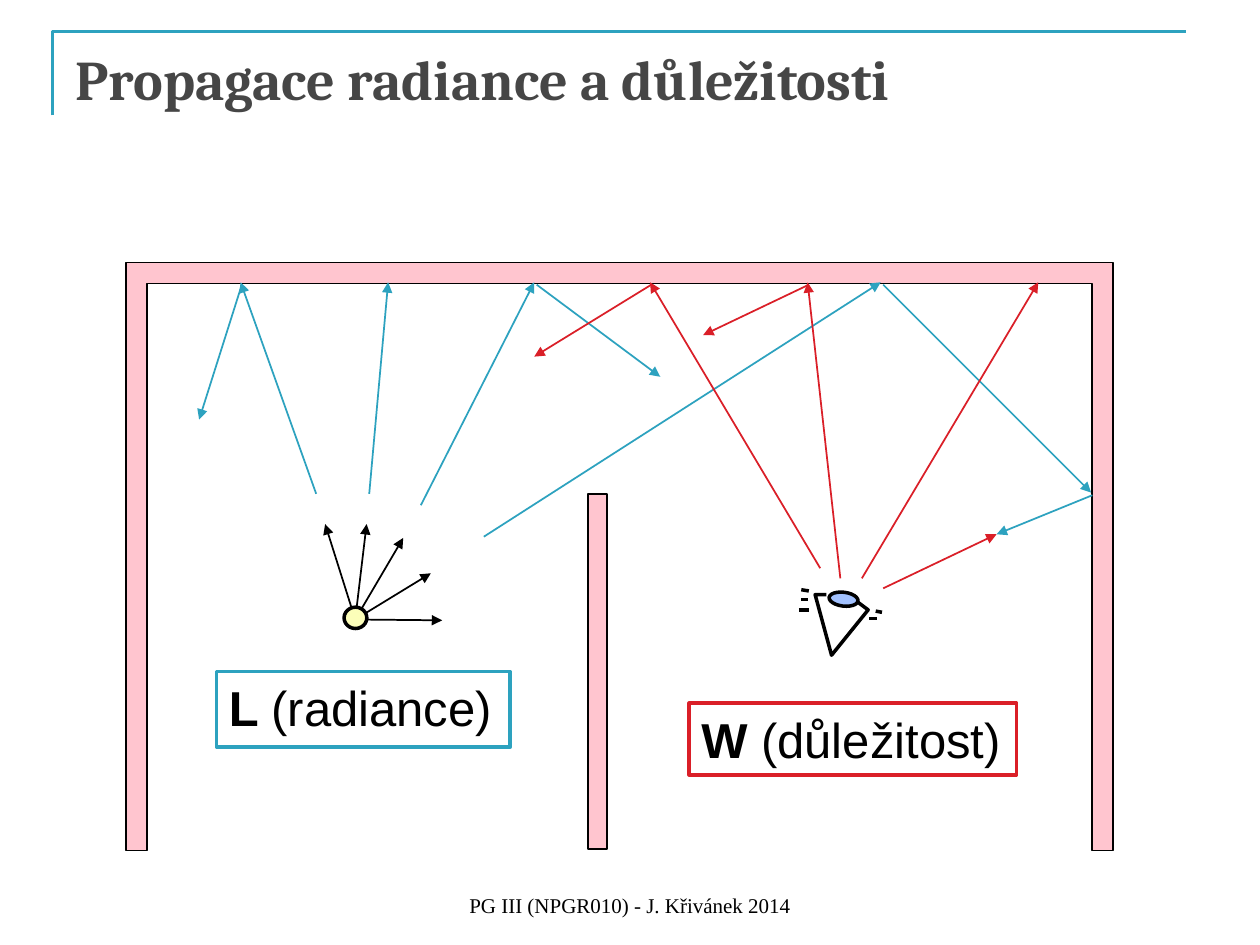
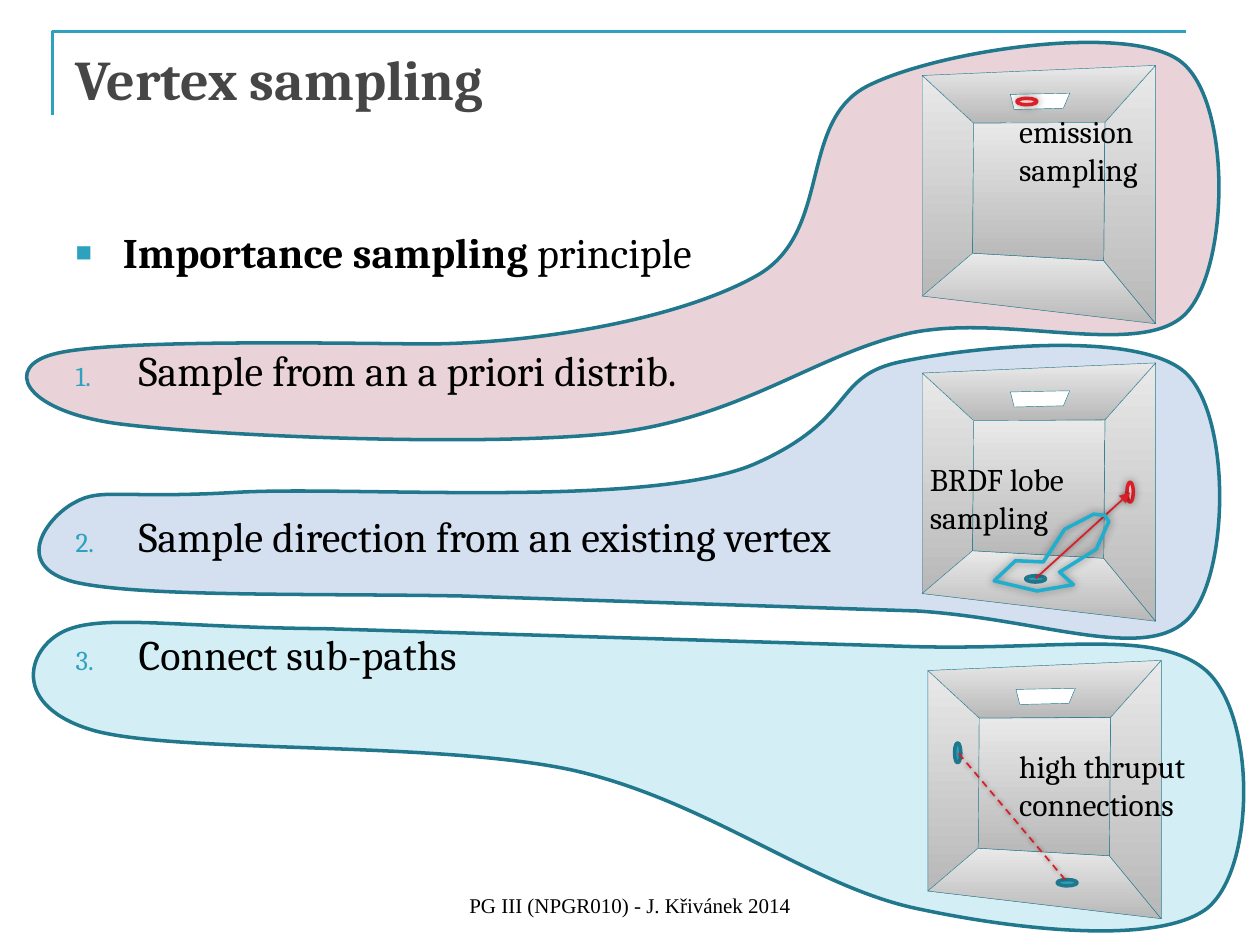
from typing import NamedTuple, Optional

from pptx import Presentation
from pptx.dml.color import RGBColor
from pptx.enum.dml import MSO_LINE
from pptx.enum.shapes import MSO_CONNECTOR, MSO_SHAPE
from pptx.enum.text import MSO_ANCHOR, MSO_AUTO_SIZE, PP_ALIGN
from pptx.oxml.ns import qn
from pptx.oxml.xmlchemy import OxmlElement
from pptx.util import Pt

HUES = {
    "black": "000000", "white": "FFFFFF", "title": "464646",
    "teal": "2DA2BF", "deep": "21788D", "edge": "227A8F", "lobe": "1FAECD",
    "red": "DA1F28", "blush": "F9D1D3", "wall": "FFC5CF",
    "lamp": "FCFEB9", "iris": "A2C1FE", "dark": "B8B8B8", "pale": "E9E9E9",
    "rose": "EAD3D8", "blue": "D4DFEF", "aqua": "D3EEF5",
}


class Ray(NamedTuple):
    x1: float
    y1: float
    x2: float
    y2: float


class Label(NamedTuple):
    box: tuple
    words: tuple
    edge: Optional[str] = None


class Blob(NamedTuple):
    fill: str
    start: tuple
    curves: list  # two handles and an end point per curve


class Mark(NamedTuple):
    x: float
    y: float
    fill: str
    edge: str
    turn: int = 0
    blur: float = 0


class Item(NamedTuple):
    words: tuple
    gap: float
    indent: float
    tag: str
    kind: dict


FOOTER = "PG III (NPGR010) - J. Křivánek 2014"

LAMP = (203, 354)
TIPS = [(252.7, 354.5), (185.8, 299.5), (246.2, 327.6), (230.4, 307.4), (209.5, 299.5)]
LASHES = [
    Ray(457.9, 337, 462.2, 337.7), Ray(457.9, 342.7, 461.5, 342.7),
    Ray(456.5, 348.5, 462.2, 348.5), Ray(500.4, 349.2, 504, 349.9),
    Ray(496.8, 353.5, 501.1, 353.5),
]
RAYS = {
    "teal": [
        Ray(240.5, 288.7, 305.3, 161.3), Ray(211, 282.2, 221.8, 161.3),
        Ray(276.5, 306.7, 503.3, 161.3), Ray(180.7, 282.2, 137.5, 161.3),
        Ray(306.7, 162.7, 377.3, 215.3), Ray(504.7, 162.7, 623.5, 281.5),
        Ray(138.2, 162.7, 113.8, 239.8), Ray(624.2, 283, 569.5, 305.3),
    ],
    "red": [
        Ray(492.5, 330.5, 593.3, 161.3), Ray(480.2, 330.5, 461.5, 161.3),
        Ray(504.7, 336.2, 569.5, 305.3), Ray(462.2, 162.7, 401.8, 191.5),
        Ray(468.7, 324.7, 371.5, 161.3), Ray(372.2, 162.7, 305.3, 203.8),
    ],
}
TERMS = [
    Label((123.8, 383.8, 167.8, 43.2), (("L ", True), ("(radiance)", False)), "teal"),
    Label((393.8, 401.8, 187.2, 41), (("W ", True), ("(důležitost)", False)), "red"),
]

BLOBS = [
    Blob("aqua", (523.4, 519.1), [
        (583.9, 532.1), (662.4, 540), (689.8, 519.1),
        (717.8, 496.1), (717.8, 408.2), (689, 383),
        (660.2, 358.6), (602.6, 372.2), (517.7, 369.4),
        (517.7, 369.4), (185, 359.3), (185, 359.3),
        (100.1, 358.6), (58.3, 350.6), (36.7, 360.7),
        (15.1, 370.8), (5.8, 403.9), (54, 417.6),
        (102.2, 430.6), (247.7, 423.4), (326.2, 439.9),
        (403.9, 457.2), (463, 506.2), (523.4, 519.1)]),
    Blob("blue", (42.5, 332.6), [
        (79.2, 341.3), (179.3, 339.1), (263.5, 340.6),
        (263.5, 340.6), (524.2, 349.2), (524.2, 349.2),
        (593.3, 353.5), (652.3, 378), (677.5, 355),
        (702.7, 332.6), (704.2, 238.3), (677.5, 213.1),
        (650.9, 188.6), (556.6, 198), (515.5, 206.6),
        (475.2, 214.6), (490.3, 238.3), (433.4, 264.2),
        (374.4, 291.6), (198.7, 277.2), (133.2, 281.5),
        (67.7, 285.1), (57.6, 278.6), (42.5, 287.3),
        (27.4, 295.2), (5.8, 323.3), (42.5, 332.6)]),
    Blob("rose", (241.2, 196.6), [
        (171.4, 195.8), (60.5, 194.4), (31, 202.3),
        (2.2, 209.5), (12.2, 234), (65.5, 241.9),
        (118.1, 249.1), (272.9, 255.6), (348.5, 247.7),
        (424.8, 239), (466.6, 201.6), (521.3, 190.1),
        (576, 179.3), (652.3, 205.2), (677.5, 179.3),
        (702.7, 153.4), (704.2, 56.2), (673.9, 34.6),
        (643.7, 13), (536.4, 28.8), (496.1, 49),
        (455.8, 69.1), (475.9, 131.8), (433.4, 157),
        (391, 181.4), (309.6, 196.6), (241.2, 196.6)]),
]

# Corners of a room: outer and inner, top and bottom, left and right
CORNERS = {
    "otl": (527, 43.2), "otr": (660.4, 37.4), "obl": (527, 169.2), "obr": (660.4, 185),
    "itl": (556.4, 70.4), "itr": (631.4, 70), "ibl": (555.8, 144.7), "ibr": (630.7, 149),
}
FACES = ["otl otr itr itl", "obl ibl itl otl", "obl obr ibr ibl",
         "obr otr itr ibr", "itl itr ibr ibl"]
PANEL = [(607.7, 61.9), (611.3, 53.3), (577.4, 54), (579.6, 62.6)]
ROOMS = [(0, 0), (0, 170), (3.2, 340)]
MARKS = [
    Mark(586.8, 58, "blush", "red", blur=5),
    Mark(591.8, 330.8, "teal", "deep"),
    Mark(645.8, 281.2, "blush", "red", 270, 5),
    Mark(609.8, 504.4, "teal", "deep"),
    Mark(547.2, 430.2, "teal", "deep", 90),
]
LOBE = [
    (613.4, 334.1), (605.5, 326.9), (626.4, 313.9), (633.6, 298.1),
    (631.4, 294.5), (625, 293.8), (608.4, 302.4), (596.2, 321.1),
    (580.3, 320.4), (568.1, 331.9), (592.6, 337.7),
]
NOTES = [
    Label((524.2, 259.2, 102.2, 51.1), ("BRDF lobe", "sampling")),
    Label((575.3, 60.5, 88.6, 51.1), ("emission", "sampling")),
    Label((575.3, 423.4, 116.6, 51.1), ("high thruput", "connections")),
]
DOT = ("a:buChar", {"char": "■"})
NUMBER = ("a:buAutoNum", {"type": "arabicPeriod"})
ITEMS = [
    Item((("Importance sampling", True), (" principle", False)), 4.8, 27, *DOT),
    Item((("Sample from an a priori distrib.", False),), 38.5, 36, *NUMBER),
    Item((("Sample direction from an existing vertex", False),), 66, 36, *NUMBER),
    Item((("Connect sub-paths", False),), 38.5, 36, *NUMBER),
]


def hue(name: str) -> RGBColor:
    return RGBColor.from_string(HUES[name])


def node(parent, tag: str, **attrs):
    child = OxmlElement(tag)
    for key, value in attrs.items():
        child.set(key, str(value))
    parent.append(child)
    return child


def shade(shape, blur: float = 0, alpha: int = 40) -> None:
    """Replace the theme shadow by a soft one, or by none if blur is 0."""
    effects = node(shape.element.spPr, "a:effectLst")
    if blur:
        outer = node(effects, "a:outerShdw", blurRad=Pt(blur), dist=0, dir=0)
        color = node(outer, "a:srgbClr", val=HUES["black"])
        node(color, "a:alpha", val=alpha * 1000)


def paint(shape, fill=None, edge="black", width=1.0, blur=0.0):
    if fill == "metal":
        shape.fill.gradient()
        shape.fill.gradient_angle = 90
        for stop, name in zip(shape.fill.gradient_stops, ("dark", "pale")):
            stop.color.rgb = hue(name)
    elif fill:
        shape.fill.solid()
        shape.fill.fore_color.rgb = hue(fill)
    else:
        shape.fill.background()
    shape.line.color.rgb = hue(edge)
    shape.line.width = Pt(width)
    shade(shape, blur)
    return shape


def form(slide, kind, box: tuple, **look):
    return paint(slide.shapes.add_shape(kind, *map(Pt, box)), **look)


def trace(slide, points: list, close=True, **look):
    start, *rest = [(Pt(x), Pt(y)) for x, y in points]
    pen = slide.shapes.build_freeform(*start)
    pen.add_line_segments(rest, close=close)
    return paint(pen.convert_to_shape(), **look)


def bend(shape) -> None:
    """Turn each three line segments into one Bezier curve."""
    lines = list(shape.element.iter(qn("a:lnTo")))
    for i in range(0, len(lines), 3):
        curve = OxmlElement("a:cubicBezTo")
        lines[i].addprevious(curve)
        for line in lines[i:i + 3]:
            curve.append(line[0])
            line.getparent().remove(line)


def link(slide, ray: Ray, edge="black", width=1.0, arrow=True, dash=False, blur=0.0):
    line = slide.shapes.add_connector(MSO_CONNECTOR.STRAIGHT, *map(Pt, ray))
    line.line.color.rgb = hue(edge)
    line.line.width = Pt(width)
    if dash:
        line.line.dash_style = MSO_LINE.DASH
    if arrow:
        node(line.element.spPr.find(qn("a:ln")), "a:tailEnd", type="triangle")
    shade(line, blur, 50)


def say(para, text: str, size=18.0, font="Cambria", color="black", bold=False) -> None:
    run = para.add_run()
    run.text = text
    run.font.size, run.font.name, run.font.bold = Pt(size), font, bold
    run.font.color.rgb = hue(color)


def place(shape, box: tuple, anchor=MSO_ANCHOR.TOP, wrap=True):
    shape.left, shape.top, shape.width, shape.height = map(Pt, box)
    frame = shape.text_frame
    frame.auto_size = MSO_AUTO_SIZE.NONE
    frame.vertical_anchor, frame.word_wrap = anchor, wrap
    return frame


def write(slide, box: tuple, **layout):
    shape = slide.shapes.add_textbox(*map(Pt, box))
    return shape, place(shape, box, **layout)


def begin(deck, layout: int, title: str):
    """Add a slide with the corner rule, title and footer."""
    slide = deck.slides.add_slide(deck.slide_layouts[layout])
    trace(slide, [(30, 66), (30, 18), (678, 18)], close=False, edge="teal", width=1.5)
    para = place(slide.shapes.title, (36, 21.6, 648, 90)).paragraphs[0]
    para.alignment = PP_ALIGN.LEFT
    say(para, title, size=32, color="title", bold=True)
    para = write(slide, (246, 492, 228, 36), anchor=MSO_ANCHOR.BOTTOM)[1].paragraphs[0]
    para.alignment = PP_ALIGN.CENTER
    say(para, FOOTER, size=12, font="Times New Roman")
    return slide


def scene(deck) -> None:
    slide = begin(deck, 5, "Propagace radiance a důležitosti")
    eye = [(472.3, 339.8), (465.8, 339.8), (475.2, 374.4), (496.1, 348.5), (490.3, 344.2)]
    iris = form(slide, MSO_SHAPE.OVAL, (478.1, 334.1, 7.9, 16.6), fill="iris", width=2)
    iris.rotation = 277
    trace(slide, eye, close=False, width=2)
    for lash in LASHES:
        link(slide, lash, width=2, arrow=False)
    for tip in TIPS:
        link(slide, Ray(*LAMP, *tip))
    form(slide, MSO_SHAPE.OVAL, (196.6, 347, 13, 12.2), fill="lamp", width=2)
    form(slide, MSO_SHAPE.RECTANGLE, (336.2, 282.2, 10.8, 203), fill="wall")
    trace(slide, [(84, 486), (72, 486), (72, 150), (636, 150), (636, 486),
                  (624, 486), (624, 162), (84, 162)], fill="wall")
    for edge, rays in RAYS.items():
        for ray in rays:
            link(slide, ray, edge)
    for term in TERMS:
        shape, frame = write(slide, term.box, wrap=False)
        paint(shape, edge=term.edge, width=2)
        for text, bold in term.words:
            say(frame.paragraphs[0], text, size=28, font="Arial", bold=bold)


def enlist(frame) -> None:
    for i, item in enumerate(ITEMS):
        para = frame.add_paragraph() if i else frame.paragraphs[0]
        para.space_before = Pt(item.gap)
        for text, bold in item.words:
            say(para, text, size=24, bold=bold)
        props = para._p.get_or_add_pPr()
        props.set("marL", str(Pt(item.indent)))
        props.set("indent", str(-Pt(item.indent)))
        node(node(props, "a:buClr"), "a:srgbClr", val=HUES["teal"])
        node(props, "a:buSzPct", val=65000)
        node(props, "a:buFont", typeface="Arial" if item.tag == DOT[0] else "Cambria")
        node(props, item.tag, **item.kind)


def room(slide, dx: float, dy: float) -> None:
    def shift(points):
        return [(x + dx, y + dy) for x, y in points]

    for face in FACES:
        trace(slide, shift(CORNERS[key] for key in face.split()),
              fill="metal", edge="edge", width=0.25)
    trace(slide, shift(PANEL), fill="white", edge="edge", width=0.25)


def sampling(deck) -> None:
    slide = begin(deck, 1, "Vertex sampling")
    tree = slide.shapes.element
    footer = slide.shapes[-1]
    for blob in BLOBS:
        bend(trace(slide, [blob.start, *blob.curves], fill=blob.fill, edge="deep", width=2))
    body = slide.placeholders[1]
    enlist(place(body, (36, 126, 648, 356.4)))
    for shape in (slide.shapes.title, body, footer):
        tree.append(shape.element)  # bring to front
    for offset in ROOMS:
        room(slide, *offset)
    for mark in MARKS:
        box = (mark.x - 5.75, mark.y - 1.8, 11.5, 3.6)
        form(slide, MSO_SHAPE.OVAL, box, fill=mark.fill, edge=mark.edge,
             width=2, blur=mark.blur).rotation = mark.turn
    link(slide, Ray(591.8, 330.5, 645.8, 281.5), "red", blur=3)
    link(slide, Ray(547.9, 430.6, 609.8, 504), "red", arrow=False, dash=True, blur=3)
    trace(slide, LOBE, edge="lobe", width=2, blur=5)
    for note in NOTES:
        frame = write(slide, note.box, wrap=False)[1]
        for i, text in enumerate(note.words):
            say(frame.add_paragraph() if i else frame.paragraphs[0], text)


def main() -> None:
    deck = Presentation()
    deck.slide_width, deck.slide_height = Pt(720), Pt(540)
    scene(deck)
    sampling(deck)
    deck.save("out.pptx")


if __name__ == "__main__":
    main()
